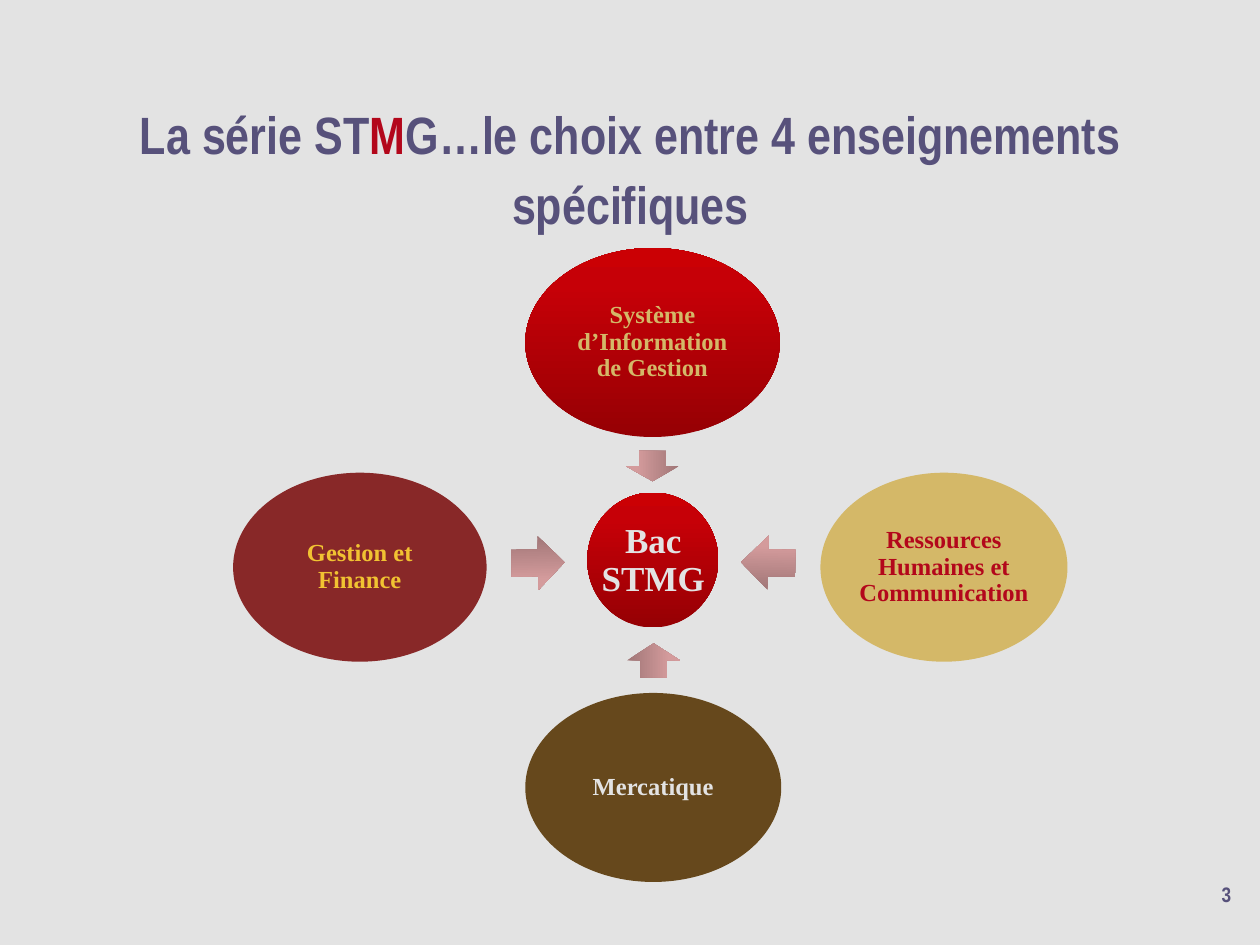
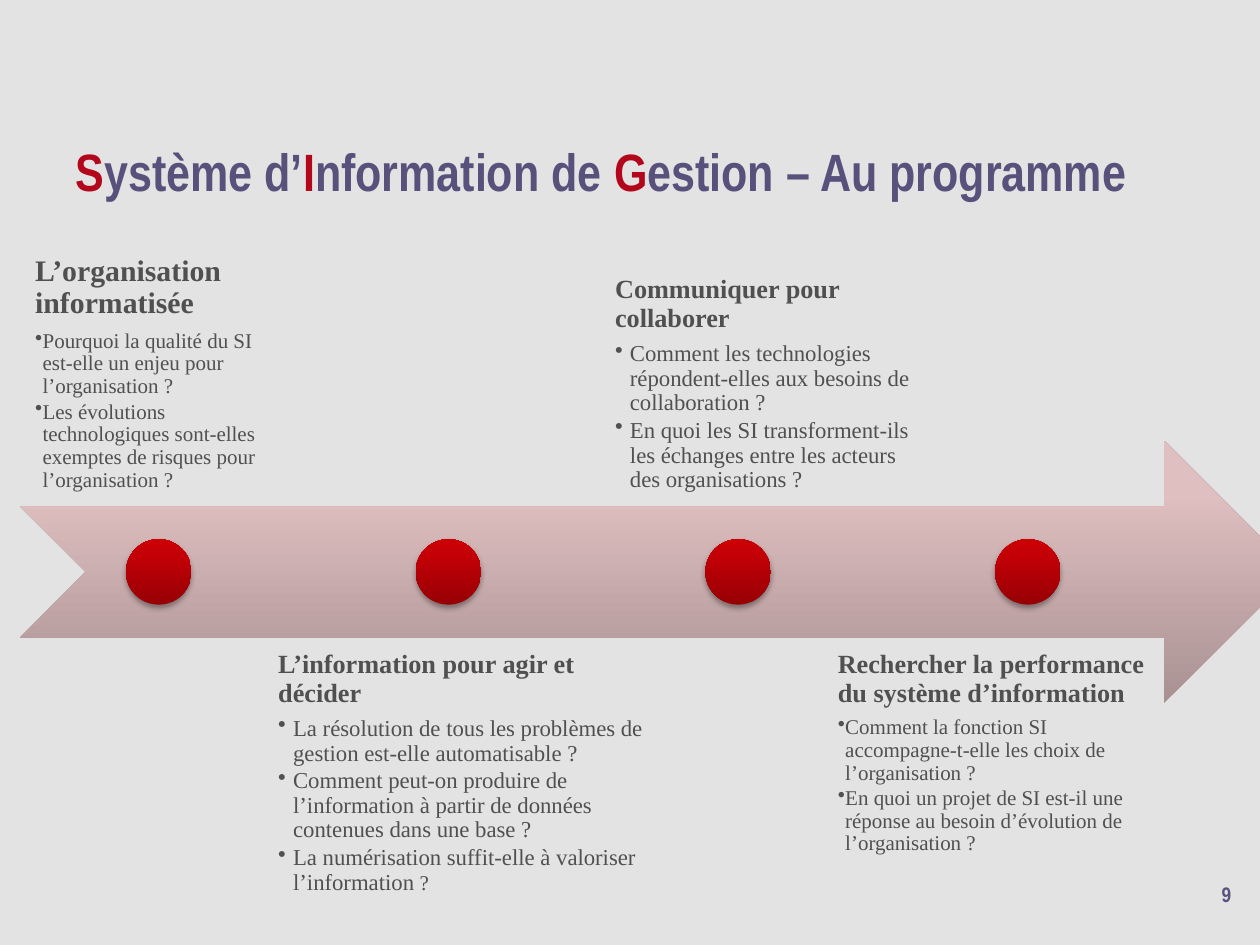
from lxml.etree import SubElement
from pptx import Presentation
from pptx.dml.color import RGBColor
from pptx.enum.shapes import MSO_SHAPE
from pptx.enum.text import MSO_ANCHOR, PP_ALIGN
from pptx.oxml.ns import qn
from pptx.util import Cm, Pt

PAPER, INK, RED, GREY = "E3E3E3", "57517B", "B3071B", "505050"
GOLD = "D4B868"
GLOSS = ("960004", "C60007", "CB0004")
ROSE = ("A07677", "D49B9C", "D69B9C")
PALE = ("A99192", "DFBFC0", "E1BFC0")
HEAD, BODY = "Arial Narrow", "Times New Roman"
LEFT, MID, RIGHT = PP_ALIGN.LEFT, PP_ALIGN.CENTER, PP_ALIGN.RIGHT


def tint(code):
    return RGBColor.from_string(code)


class Deck:
    """Hold the shared style and draw each kind of element on the current slide."""

    def __init__(self):
        self.show = Presentation()
        self.show.slide_width, self.show.slide_height = Cm(25.4), Cm(19.05)
        self.slide = None

    def page(self, title, align, top, number):
        self.slide = self.show.slides.add_slide(self.show.slide_layouts[6])
        back = self.slide.background.fill
        back.solid()
        back.fore_color.rgb = tint(PAPER)
        frame = self.box((1.28, top, 22.86, 2.87), (0.25, 0), MSO_ANCHOR.MIDDLE)
        self.text(frame.paragraphs[0], title, (30, INK), (30, RED), HEAD, align=align, space=1.1)
        frame = self.box((23.9, 17.78, 1.17, 0.51), (0.25, 0))
        self.text(frame.paragraphs[0], number, (12, INK), face=HEAD, align=RIGHT, space=1.0)

    def inset(self, frame, pad, anchor):
        frame.word_wrap = True
        frame.vertical_anchor = anchor
        frame.margin_left = frame.margin_right = Cm(pad[0])
        frame.margin_top = frame.margin_bottom = Cm(pad[1])
        return frame

    def box(self, area, pad, anchor=MSO_ANCHOR.TOP):
        frame = self.slide.shapes.add_textbox(*map(Cm, area)).text_frame
        return self.inset(frame, pad, anchor)

    def text(self, para, words, base, odd=None, face=BODY, bold=True, align=LEFT, space=0.9):
        para.alignment, para.line_spacing = align, space
        for spot, part in enumerate(words.split("|")):
            if not part:
                continue
            run = para.add_run()
            run.text = part
            size, hue = odd if spot % 2 else base
            run.font.size, run.font.bold, run.font.name = Pt(size), bold, face
            run.font.color.rgb = tint(hue)

    def shape(self, kind, area, fill, turn=0):
        shape = self.slide.shapes.add_shape(kind, *map(Cm, area))
        shape.shadow.inherit = False
        shape.line.fill.background()
        shape.rotation = turn
        if isinstance(fill, str):
            shape.fill.solid()
            shape.fill.fore_color.rgb = tint(fill)
        else:
            shape.fill.gradient()
            shape.fill.gradient_angle = 90
            stops = shape._element.spPr.find(".//" + qn("a:gsLst"))
            for stop in list(stops):
                stops.remove(stop)
            for place, hue in zip((0, 80000, 100000), fill):
                stop = SubElement(stops, qn("a:gs"), pos=str(place))
                SubElement(stop, qn("a:srgbClr"), val=hue)
        return shape

    def oval(self, area, fill, words, hue):
        shape = self.shape(MSO_SHAPE.OVAL, area, fill)
        frame = self.inset(shape.text_frame, (0.05, 0.05), MSO_ANCHOR.MIDDLE)
        self.text(frame.paragraphs[0], words, (14, hue), align=MID)

    def dot(self, left):
        shape = self.shape(MSO_SHAPE.OVAL, (left, 10.87, 1.32, 1.32), GLOSS)
        glow = shape._element.spPr.find(qn("a:effectLst"))
        shade = SubElement(glow, qn("a:outerShdw"), blurRad=str(Pt(3.1)), dist=str(Pt(1.8)),
                           dir="5400000", rotWithShape="0")
        black = SubElement(shade, qn("a:srgbClr"), val="000000")
        SubElement(black, qn("a:alpha"), val="35000")

    def bullet(self, para, words, size, dent, gap):
        para.level = 1
        para.line_spacing, para.space_before = 0.9, Pt(gap)
        props = para._p.get_or_add_pPr()
        props.set("marL", str(Cm(dent)))
        props.set("indent", str(Cm(-dent)))
        SubElement(SubElement(props, qn("a:buClr")), qn("a:srgbClr"), val=GREY)
        SubElement(props, qn("a:buChar"), char="•")
        self.text(para, words, (size, GREY), (12, GREY), bold=False)

    def theme(self, area, pad, anchor, sizes, dent, head, points):
        frame = self.box(area, (pad, pad), anchor)
        self.text(frame.paragraphs[0], head, (sizes[0], GREY))
        first, later = sizes[0] * 0.33, 1.8 if sizes[1] == 13 else 1.6
        for spot, point in enumerate(points):
            gap = later if spot else first
            self.bullet(frame.add_paragraph(), point, sizes[1], dent, gap)


def choice(deck):
    deck.page("La série ST|M|G…le choix entre 4 enseignements spécifiques", MID, 1.9, "3")
    deck.shape(MSO_SHAPE.OVAL, (11.84, 9.93, 2.64, 2.72), GLOSS)
    hub = deck.box((11.58, 10.34, 3.18, 1.93), (0.08, 0.08), MSO_ANCHOR.MIDDLE)
    deck.text(hub.paragraphs[0], "Bac STMG", (20, PAPER), align=MID)
    ovals = (
        ((10.59, 5.0, 5.13, 3.81), GLOSS, "Système d’Information de Gestion", GOLD),
        ((16.54, 9.53, 4.98, 3.81), GOLD, "Ressources Humaines et Communication", RED),
        ((10.59, 13.97, 5.16, 3.81), "66481C", "Mercatique", PAPER),
        ((4.7, 9.53, 5.11, 3.81), "882828", "Gestion et Finance", "F1C232"),
    )
    arrows = (
        ((12.85, 8.86, 0.61, 1.07), 269.9),
        ((14.94, 10.8, 1.09, 1.09), 1.1),
        ((12.83, 12.78, 0.69, 1.07), 90.1),
        ((10.31, 10.8, 1.07, 1.09), 178.9),
    )
    for oval, (area, turn) in zip(ovals, arrows):
        deck.shape(MSO_SHAPE.LEFT_ARROW, area, ROSE, turn)
        deck.oval(*oval)


def course(deck):
    deck.page("|S|ystème d’|I|nformation de |G|estion – Au programme", LEFT, 1.93, "9")
    deck.shape(MSO_SHAPE.NOTCHED_RIGHT_ARROW, (0.41, 8.89, 25.7, 5.28), PALE)
    high, low = MSO_ANCHOR.BOTTOM, MSO_ANCHOR.TOP
    themes = (
        ((0.41, 4.93, 5.56, 5.28), 0.3, high, (17, 12), 0.15, "L’organisation informatisée", (
            "Pourquoi la qualité du SI est-elle un enjeu pour l’organisation ?",
            "Les évolutions technologiques sont-elles exemptes de risques pour l’organisation ?")),
        ((5.33, 12.85, 8.0, 5.28), 0.28, low, (15, 13), 0.3, "L’information pour agir et décider", (
            "La résolution de tous les problèmes de gestion est-elle automatisable ?",
            "Comment peut-on produire de l’information à partir de données contenues dans une base ?",
            "La numérisation suffit-elle à valoriser l’information |?")),
        ((12.12, 4.93, 6.73, 5.28), 0.28, high, (15, 13), 0.3, "Communiquer pour collaborer", (
            "Comment les technologies répondent-elles aux besoins de collaboration ?",
            "En quoi les SI transforment-ils les échanges entre les acteurs des organisations ?")),
        ((16.61, 12.85, 6.91, 5.28), 0.28, low, (15, 12), 0.15,
         "Rechercher la performance du système d’information", (
             "Comment la fonction SI accompagne-t-elle les choix de l’organisation ?",
             "En quoi un projet de SI est-il une réponse au besoin d’évolution de l’organisation ?")),
    )
    for spot, theme in enumerate(themes):
        deck.theme(*theme)
        deck.dot(2.54 + 5.84 * spot)


def main():
    deck = Deck()
    choice(deck)
    course(deck)
    deck.show.save("out.pptx")


if __name__ == "__main__":
    main()
